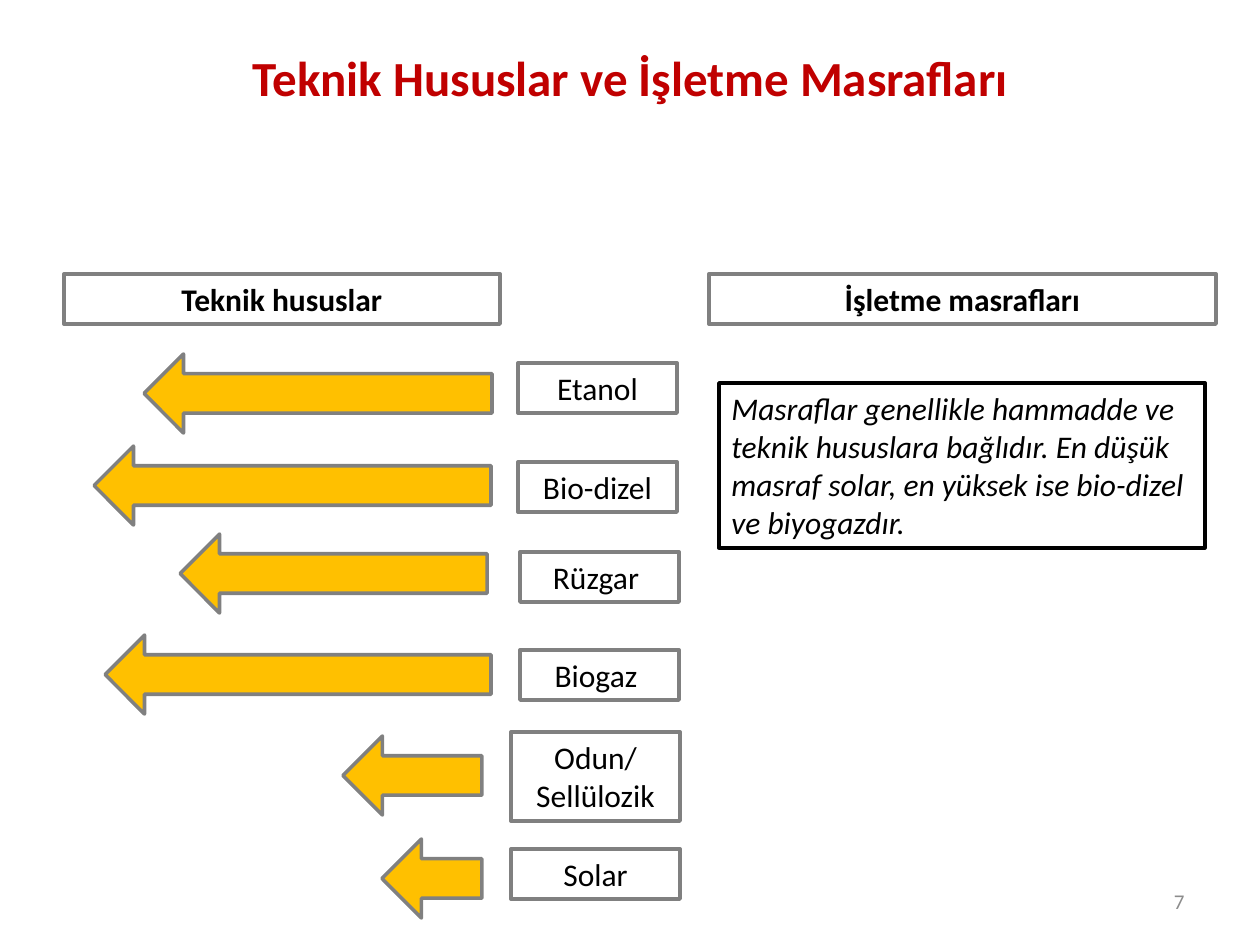
from dataclasses import dataclass

from pptx import Presentation
from pptx.dml.color import RGBColor
from pptx.enum.shapes import MSO_SHAPE
from pptx.enum.text import MSO_ANCHOR, PP_ALIGN
from pptx.util import Emu, Inches, Pt

SCALE = Inches(1) / 126


def px(n):
    return Emu(round(n * SCALE))


@dataclass(frozen=True)
class Theme:
    font: str = "Calibri"
    title: str = "C00000"
    ink: str = "000000"
    paper: str = "FFFFFF"
    border: str = "808080"
    arrow: str = "FFC000"
    muted: str = "8C8C8C"
    title_size: int = 28
    body_size: int = 18
    number_size: int = 12


class SlideBuilder:
    def __init__(self, slide, theme):
        self.slide = slide
        self.theme = theme

    def set_text(self, sp, text, size, color, align, anchor, bold=False, italic=False):
        tf = sp.text_frame
        tf.word_wrap = True
        tf.vertical_anchor = anchor
        p = tf.paragraphs[0]
        p.text = text
        p.alignment = align
        p.font.name = self.theme.font
        p.font.size = Pt(size)
        p.font.bold = bold
        p.font.italic = italic
        p.font.color.rgb = RGBColor.from_string(color)

    def text(self, x, y, w, h, text, size, color, align, bold=False):
        sp = self.slide.shapes.add_textbox(px(x), px(y), px(w), px(h))
        self.set_text(sp, text, size, color, align, MSO_ANCHOR.MIDDLE, bold)

    def shape(self, kind, x, y, w, h, line, width, fill=None):
        sp = self.slide.shapes.add_shape(kind, px(x), px(y), px(w), px(h))
        sp.shadow.inherit = False
        sp.line.color.rgb = RGBColor.from_string(line)
        sp.line.width = Pt(width)
        if fill:
            sp.fill.solid()
            sp.fill.fore_color.rgb = RGBColor.from_string(fill)
        else:
            sp.fill.background()
        return sp

    def label(self, x, y, w, h, text, bold=False):
        t = self.theme
        sp = self.shape(MSO_SHAPE.RECTANGLE, x, y, w, h, t.border, 2.25)
        self.set_text(sp, text, t.body_size, t.ink, PP_ALIGN.CENTER, MSO_ANCHOR.TOP, bold)

    def note(self, x, y, w, h, text):
        t = self.theme
        sp = self.shape(MSO_SHAPE.RECTANGLE, x, y, w, h, t.ink, 2, t.paper)
        self.set_text(sp, text, t.body_size, t.ink, PP_ALIGN.LEFT, MSO_ANCHOR.TOP, italic=True)

    def arrow(self, x, y, w, h):
        t = self.theme
        self.shape(MSO_SHAPE.LEFT_ARROW, x, y, w, h, t.border, 2, t.arrow)


HEADERS = [
    ("Teknik hususlar", 64, 436),
    ("İşletme masrafları", 709, 507),
]
ARROW_H = 79
LABEL_H = 50
ROWS = [
    ("Etanol", (144, 354, 348), (518, 363, 159, LABEL_H)),
    ("Bio-dizel", (94, 446, 397), (518, 462, 159, LABEL_H)),
    ("Rüzgar ", (180, 534, 307), (520, 552, 159, LABEL_H)),
    ("Biogaz ", (105, 635, 386), (520, 650, 159, LABEL_H)),
    ("Odun/ Sellülozik", (343, 736, 139), (511, 732, 169, 89)),
    ("Solar", (382, 839, 100), (511, 849, 169, LABEL_H)),
]
NOTE = (
    "Masraflar genellikle hammadde ve teknik hususlara bağlıdır. "
    "En düşük masraf solar, en yüksek ise bio-dizel ve biyogazdır."
)


def main():
    prs = Presentation()
    prs.slide_width, prs.slide_height = px(1260), px(945)
    t = Theme()
    s = SlideBuilder(prs.slides.add_slide(prs.slide_layouts[6]), t)

    s.text(63, 38, 1134, 77, "Teknik Hususlar ve İşletme Masrafları",
           t.title_size, t.title, PP_ALIGN.CENTER, bold=True)
    for text, x, w in HEADERS:
        s.label(x, 274, w, LABEL_H, text, bold=True)
    for text, arrow, box in ROWS:
        s.arrow(*arrow, ARROW_H)
        s.label(*box, text)
    s.text(903, 876, 294, 50, "7", t.number_size, t.muted, PP_ALIGN.RIGHT)
    s.note(719, 383, 486, 165, NOTE)

    prs.save("out.pptx")


if __name__ == "__main__":
    main()
